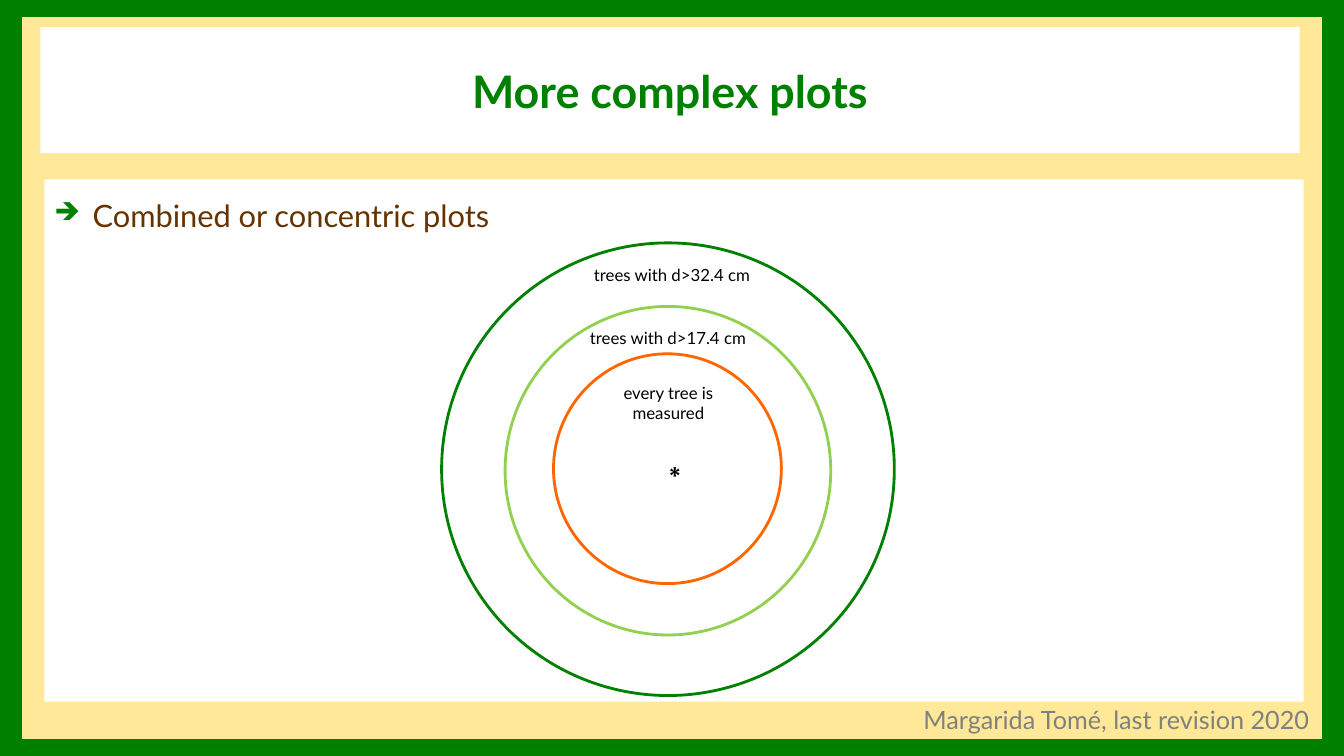
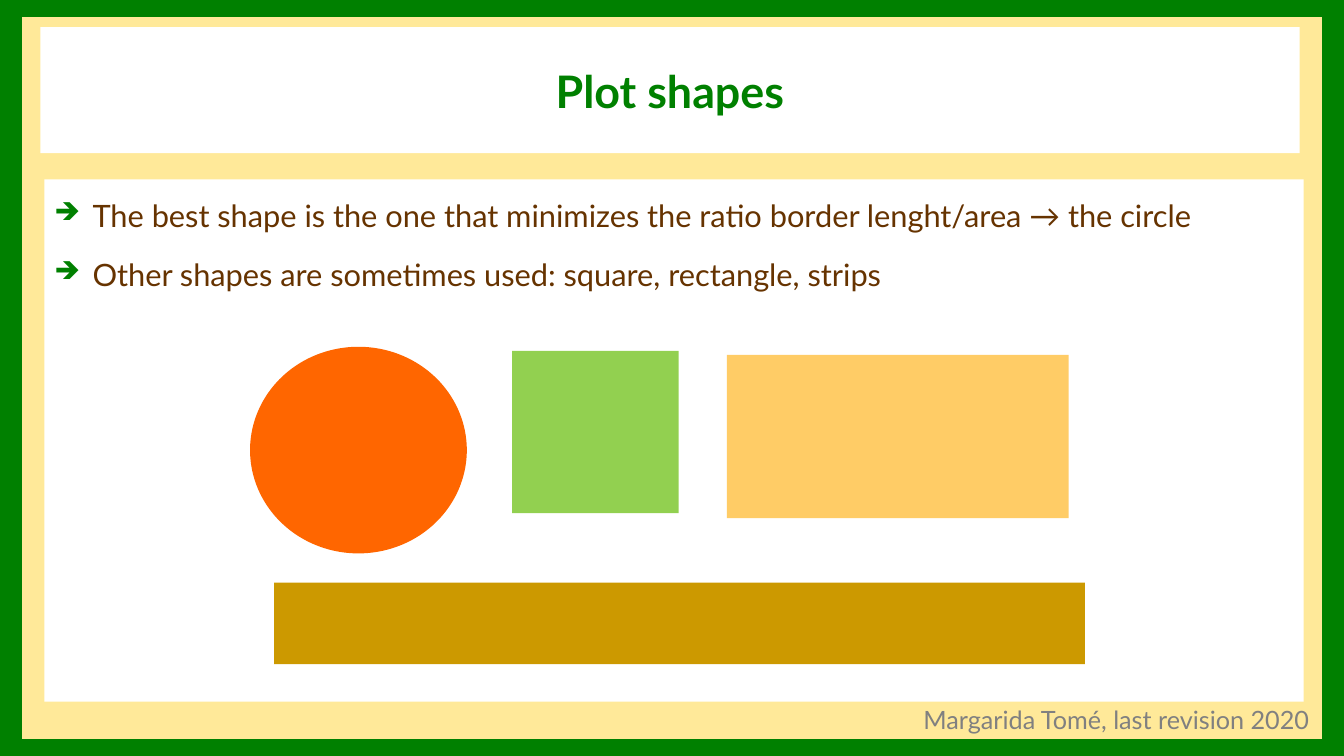
"""Build two slides about forest inventory plots: concentric plots and plot shapes."""
from lxml.etree import SubElement
from pptx import Presentation
from pptx.dml.color import RGBColor
from pptx.enum.shapes import MSO_SHAPE as Shape
from pptx.enum.text import MSO_ANCHOR as Anchor, MSO_AUTO_SIZE as AutoSize, PP_ALIGN as Align
from pptx.oxml.ns import qn
from pptx.util import Inches, Pt

COLORS = {
    "green": "008000", "cream": "FFE999", "white": "FFFFFF", "brown": "663300",
    "gray": "808080", "black": "000000", "lime": "92D050", "orange": "FF6600",
    "sand": "FFCC66", "ochre": "CC9900",
}
WIDTH, HEIGHT = 13.33, 7.5
SIDE, EDGE = 0.21, 0.16
FRAME_BARS = [
    (0, 0, SIDE, HEIGHT),
    (WIDTH - SIDE, 0, SIDE, HEIGHT),
    (0, 0, WIDTH, EDGE),
    (0, HEIGHT - EDGE, WIDTH, EDGE),
]
SLIDES = [
    {
        "title": "More complex plots",
        "bullets": ["Combined or concentric plots"],
        "shapes": [
            (Shape.OVAL, (4.38, 2.41, 4.49, 4.49), None, "green"),
            (Shape.OVAL, (5.01, 3.04, 3.23, 3.26), None, "lime"),
            (Shape.OVAL, (5.49, 3.51, 2.26, 2.28), None, "orange"),
        ],
        "labels": [
            ("trees with d>32.4 cm", (5.72, 2.58, 1.89, 0.3), 12, "black", Align.CENTER, "Lato"),
            ("trees with d>17.4 cm", (5.72, 3.2, 1.81, 0.3), 12, "black", Align.CENTER, "Lato"),
            ("every tree is measured", (5.96, 3.75, 1.34, 0.51), 12, "black", Align.CENTER, "Lato"),
            ("∗", (6.43, 4.38, 0.31, 0.51), 24, "black", Align.LEFT, "Times New Roman"),
        ],
    },
    {
        "title": "Plot shapes",
        "bullets": [
            "The best shape is the one that minimizes the ratio border lenght/area → the circle",
            "Other shapes are sometimes used: square, rectangle, strips",
        ],
        "shapes": [
            (Shape.OVAL, (2.48, 3.44, 2.15, 2.05), "orange", None),
            (Shape.RECTANGLE, (5.08, 3.48, 1.65, 1.61), "lime", None),
            (Shape.RECTANGLE, (7.21, 3.52, 3.39, 1.62), "sand", None),
            (Shape.RECTANGLE, (2.72, 5.78, 8.04, 0.81), "ochre", None),
        ],
        "labels": [],
    },
]
FOOTER = ("Margarida Tomé, last revision 2020", (9.06, 6.94, 4.15, 0.4), 18, "gray", Align.LEFT, "Lato")


def add_block(slide, kind, box, fill=None, line=None, line_width=2):
    shape = slide.shapes.add_shape(kind, *map(Inches, box))
    shape.shadow.inherit = False
    if fill:
        shape.fill.solid()
        shape.fill.fore_color.rgb = RGBColor.from_string(COLORS[fill])
    else:
        shape.fill.background()
    if line:
        shape.line.color.rgb = RGBColor.from_string(COLORS[line])
        shape.line.width = Pt(line_width)
    else:
        shape.line.fill.background()
    return shape


def write(paragraph, text, size, color, align, font="Lato", bold=False):
    paragraph.alignment = align
    run = paragraph.add_run()
    run.text = text
    run.font.name = font
    run.font.size = Pt(size)
    run.font.bold = bold
    run.font.color.rgb = RGBColor.from_string(COLORS[color])


presentation = Presentation()
presentation.slide_width = Inches(WIDTH)
presentation.slide_height = Inches(HEIGHT)
background = presentation.slide_master.background.fill
background.solid()
background.fore_color.rgb = RGBColor.from_string(COLORS["cream"])

for content in SLIDES:
    slide = presentation.slides.add_slide(presentation.slide_layouts[6])
    for bar in FRAME_BARS:
        add_block(slide, Shape.RECTANGLE, bar, "green", "green", 0.75)

    title = add_block(slide, Shape.RECTANGLE, (0.4, 0.27, 12.49, 1.25), "white")
    write(title.text_frame.paragraphs[0], content["title"], 32, "green", Align.CENTER, bold=True)

    body = add_block(slide, Shape.RECTANGLE, (0.44, 1.78, 12.49, 5.18), "white")
    frame = body.text_frame
    frame.vertical_anchor = Anchor.TOP
    frame.margin_left, frame.margin_top = Inches(0.1), Inches(0.12)
    frame.margin_right, frame.margin_bottom = Inches(0.3), Inches(0.05)
    for index, text in enumerate(content["bullets"]):
        paragraph = frame.add_paragraph() if index else frame.paragraphs[0]
        write(paragraph, text, 22, "brown", Align.JUSTIFY)
        paragraph.line_spacing = Pt(30)
        paragraph.space_before = Pt(12)
        properties = paragraph._p.get_or_add_pPr()
        properties.set("marL", str(Inches(0.38)))
        properties.set("indent", str(-Inches(0.38)))
        bullet_color = SubElement(properties, qn("a:buClr"))
        SubElement(bullet_color, qn("a:srgbClr"), val=COLORS["green"])
        SubElement(properties, qn("a:buSzPct"), val="80000")
        SubElement(properties, qn("a:buChar"), char="➔")

    for kind, box, fill, line in content["shapes"]:
        add_block(slide, kind, box, fill, line)

    for text, box, size, color, align, font in [FOOTER, *content["labels"]]:
        label = slide.shapes.add_textbox(*map(Inches, box))
        label.text_frame.word_wrap = True
        label.text_frame.auto_size = AutoSize.SHAPE_TO_FIT_TEXT
        write(label.text_frame.paragraphs[0], text, size, color, align, font)

presentation.save("out.pptx")
